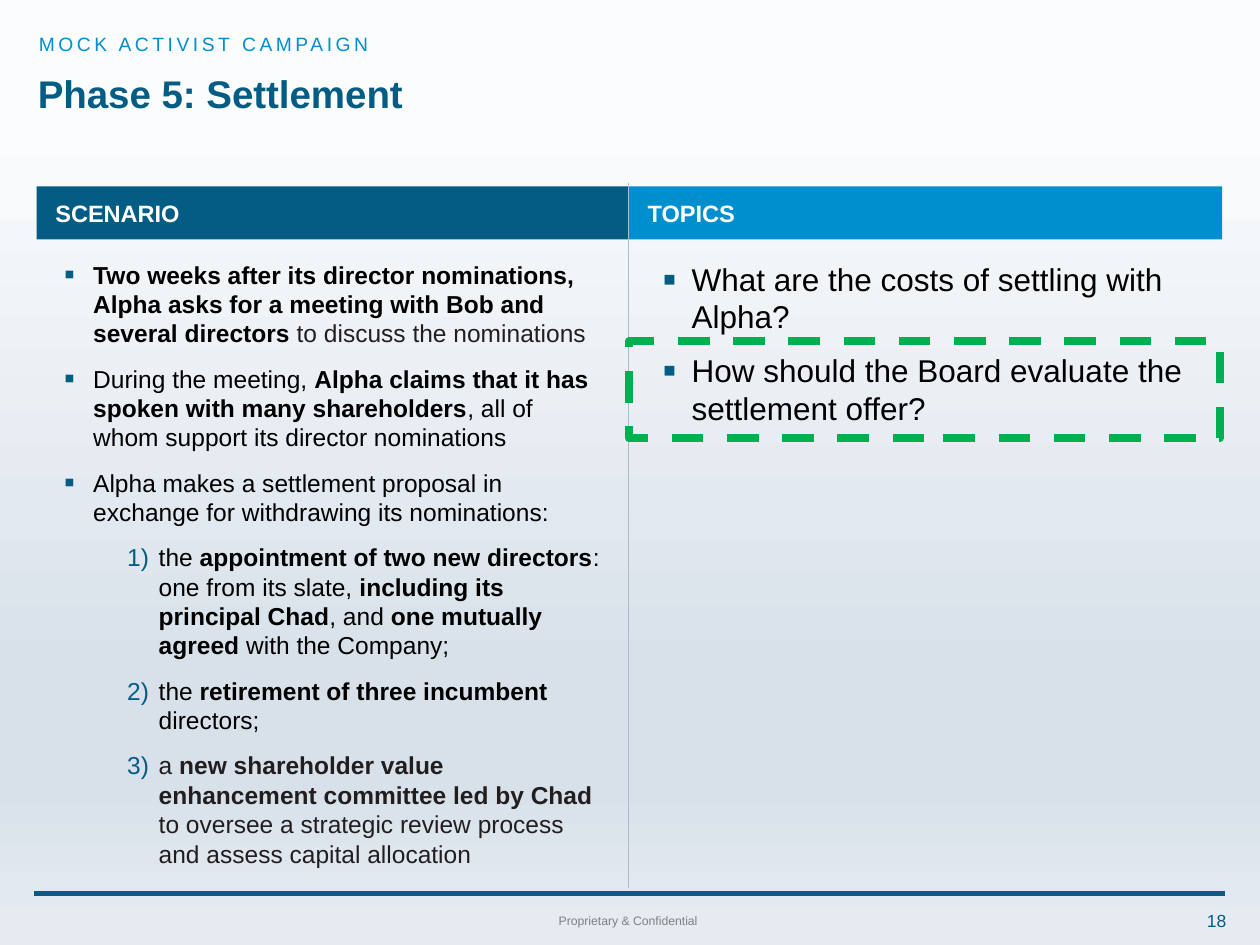
"""Build the settlement phase slide with its scenario and topics columns."""
from dataclasses import dataclass

from lxml.etree import SubElement
from pptx import Presentation
from pptx.dml.color import RGBColor
from pptx.enum.dml import MSO_LINE_DASH_STYLE as Dash
from pptx.enum.shapes import MSO_CONNECTOR as Connector, MSO_SHAPE as Preset
from pptx.enum.text import MSO_ANCHOR as Anchor, MSO_AUTO_SIZE as AutoSize, PP_ALIGN as Align
from pptx.oxml.ns import qn
from pptx.util import Inches, Pt

COLORS = {
    "navy": "025C84", "blue": "008FCE", "white": "FFFFFF", "black": "000000",
    "ink": "221E20", "gray": "808080", "divider": "A9BDD1", "green": "00B050",
}
BACKDROP = ((13, "FBFCFD"), (71, "D8E1EA"), (83, "D8E1EA"), (98, "E5EBF1"))


@dataclass
class Box:
    left: float
    top: float
    width: float
    height: float

    def lengths(self) -> tuple:
        return tuple(Inches(v) for v in (self.left, self.top, self.width, self.height))


@dataclass
class Phrase:
    text: str
    bold: bool = False
    color: str = "black"


@dataclass
class Item:
    phrases: list[Phrase]
    numbered: bool = False


@dataclass
class Column:
    heading: str
    fill: str
    header: Box
    body: Box
    size: float
    items: list[Item]


@dataclass
class Label:
    text: str
    box: Box
    size: float
    color: str
    align: Align = Align.LEFT
    anchor: Anchor = Anchor.TOP
    spacing: int = 0


def rgb(name: str) -> RGBColor:
    return RGBColor.from_string(COLORS[name])


def place(shape, box: Box) -> None:
    shape.left, shape.top, shape.width, shape.height = box.lengths()


def add_run(paragraph, phrase: Phrase, size: float):
    run = paragraph.add_run()
    run.text = phrase.text
    run.font.name, run.font.size, run.font.bold = "Arial", Pt(size), phrase.bold
    run.font.color.rgb = rgb(phrase.color)
    return run


def add_marker(paragraph, numbered: bool) -> None:
    props = paragraph._p.get_or_add_pPr()
    indent, hang = (0.75, 0.25) if numbered else (0.23, 0.23)
    props.set("marL", str(Inches(indent)))
    props.set("indent", str(-Inches(hang)))
    tint = SubElement(props, qn("a:buClr"))
    SubElement(tint, qn("a:srgbClr"), val=COLORS["navy"])
    SubElement(props, qn("a:buSzPct"), val="100000" if numbered else "125000")
    SubElement(props, qn("a:buFont"), typeface="Arial")
    if numbered:
        SubElement(props, qn("a:buAutoNum"), type="arabicParenR")
    else:
        SubElement(props, qn("a:buChar"), char="▪")


def fill_list(placeholder, column: Column) -> None:
    place(placeholder, column.body)
    frame = placeholder.text_frame
    frame.word_wrap, frame.auto_size = True, AutoSize.NONE
    for index, item in enumerate(column.items):
        paragraph = frame.add_paragraph() if index else frame.paragraphs[0]
        paragraph.level = int(item.numbered)
        add_marker(paragraph, item.numbered)
        paragraph.space_before = Pt(4.5 if index else 0)
        paragraph.space_after = Pt(4.5)
        for phrase in item.phrases:
            add_run(paragraph, phrase, column.size)


def add_header(slide, column: Column) -> None:
    header = slide.shapes.add_shape(Preset.RECTANGLE, *column.header.lengths())
    header.shadow.inherit = False
    header.fill.solid()
    header.fill.fore_color.rgb = rgb(column.fill)
    header.line.fill.background()
    frame = header.text_frame
    frame.margin_left = Inches(0.15)
    frame.margin_top = frame.margin_right = frame.margin_bottom = 0
    frame.vertical_anchor = Anchor.MIDDLE
    frame.paragraphs[0].alignment = Align.LEFT
    add_run(frame.paragraphs[0], Phrase(column.heading, True, "white"), 13.5)


def add_label(slide, label: Label) -> None:
    frame = slide.shapes.add_textbox(*label.box.lengths()).text_frame
    frame.word_wrap, frame.vertical_anchor = True, label.anchor
    frame.paragraphs[0].alignment = label.align
    run = add_run(frame.paragraphs[0], Phrase(label.text, False, label.color), label.size)
    if label.spacing:
        run.font._element.set("spc", str(label.spacing))


def add_rule(slide, start: tuple, end: tuple, color: str, width: float) -> None:
    ends = [Inches(v) for v in (*start, *end)]
    rule = slide.shapes.add_connector(Connector.STRAIGHT, *ends)
    rule.line.color.rgb, rule.line.width = rgb(color), Pt(width)
    SubElement(rule._element.spPr, qn("a:effectLst"))


def paint_background(slide) -> None:
    fill = slide.background.fill
    fill.gradient()
    fill.gradient_angle = 270
    stops = slide.element.find(".//" + qn("a:gsLst"))
    stops.clear()
    for percent, color in BACKDROP:
        stop = SubElement(stops, qn("a:gs"), pos=str(percent * 1000))
        SubElement(stop, qn("a:srgbClr"), val=color)


def add_title(slide, text: str) -> None:
    title = slide.shapes.title
    place(title, Box(0.2, 0.38, 9.66, 0.77))
    frame = title.text_frame
    frame.auto_size, frame.vertical_anchor = AutoSize.NONE, Anchor.MIDDLE
    paragraph = frame.paragraphs[0]
    paragraph.alignment, paragraph.line_spacing = Align.LEFT, 0.9
    add_run(paragraph, Phrase(text, True, "navy"), 22)


def add_highlight(slide, box: Box) -> None:
    highlight = slide.shapes.add_shape(Preset.RECTANGLE, *box.lengths())
    highlight.shadow.inherit = False
    highlight.fill.background()
    highlight.line.color.rgb, highlight.line.width = rgb("green"), Pt(4.5)
    highlight.line.dash_style = Dash.DASH


SCENARIO = Column("SCENARIO", "navy", Box(0.29, 1.48, 4.7, 0.42), Box(0.41, 2.01, 4.45, 5.04), 14, [
    Item([Phrase("Two weeks after its director nominations, Alpha asks for a meeting with Bob and several directors ", True),
          Phrase("to discuss the nominations", color="ink")]),
    Item([Phrase("During the meeting, "), Phrase("Alpha claims that it has spoken with many shareholders", True),
          Phrase(", all of whom support its director nominations")]),
    Item([Phrase("Alpha makes a settlement proposal in exchange for withdrawing its nominations:")]),
    Item([Phrase("the "), Phrase("appointment of two new directors", True), Phrase(": one from its slate, "),
          Phrase("including its principal Chad", True), Phrase(", and "),
          Phrase("one mutually agreed ", True), Phrase("with the Company;")], True),
    Item([Phrase("the "), Phrase("retirement of three incumbent ", True), Phrase("directors;")], True),
    Item([Phrase("a ", color="ink"), Phrase("new shareholder value enhancement committee led by Chad ", True, "ink"),
          Phrase("to oversee a strategic review process and assess capital allocation", color="ink")], True),
])
TOPICS = Column("TOPICS", "blue", Box(4.99, 1.48, 4.71, 0.42), Box(5.16, 2.01, 4.54, 1.45), 18, [
    Item([Phrase("What are the costs of settling with Alpha?")]),
    Item([Phrase("How should the Board evaluate the settlement offer?")]),
])
LABELS = (
    Label("MOCK ACTIVIST CAMPAIGN", Box(0.21, 0.21, 9.65, 0.23), 11, "blue", spacing=200),
    Label("Proprietary & Confidential", Box(0.25, 7.2, 9.47, 0.22), 7, "gray", Align.CENTER),
    Label("18", Box(9.34, 7.17, 0.49, 0.27), 10, "navy", Align.RIGHT, Anchor.MIDDLE),
)


def main() -> None:
    deck = Presentation()
    deck.slide_width, deck.slide_height = Inches(10), Inches(7.5)
    slide = deck.slides.add_slide(deck.slide_layouts[3])
    paint_background(slide)
    add_title(slide, "Phase 5: Settlement")
    for index, column in enumerate((SCENARIO, TOPICS), start=1):
        fill_list(slide.placeholders[index], column)
        add_header(slide, column)
    add_rule(slide, (4.99, 1.45), (4.99, 7.05), "divider", 0.25)
    add_rule(slide, (0.27, 7.09), (9.72, 7.09), "navy", 3)
    for label in LABELS:
        add_label(slide, label)
    add_highlight(slide, Box(4.99, 2.71, 4.69, 0.77))
    deck.save("out.pptx")


if __name__ == "__main__":
    main()
